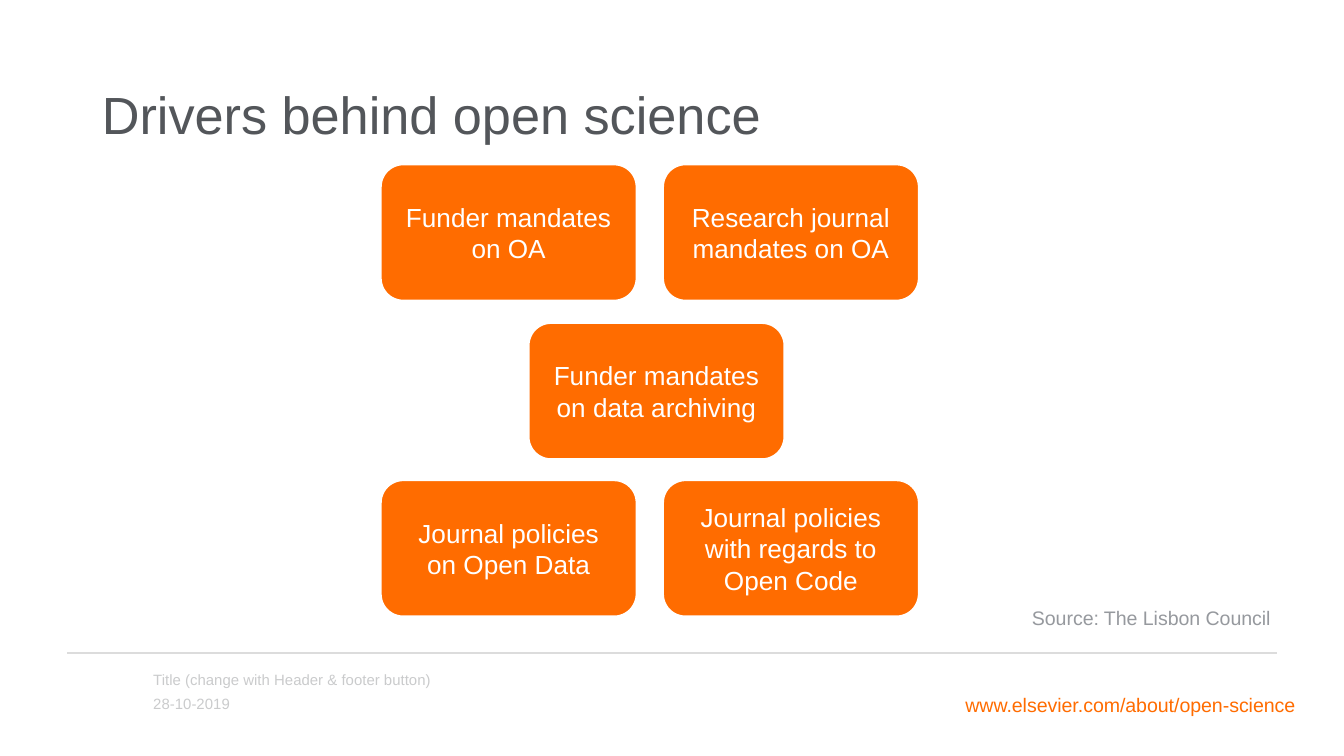
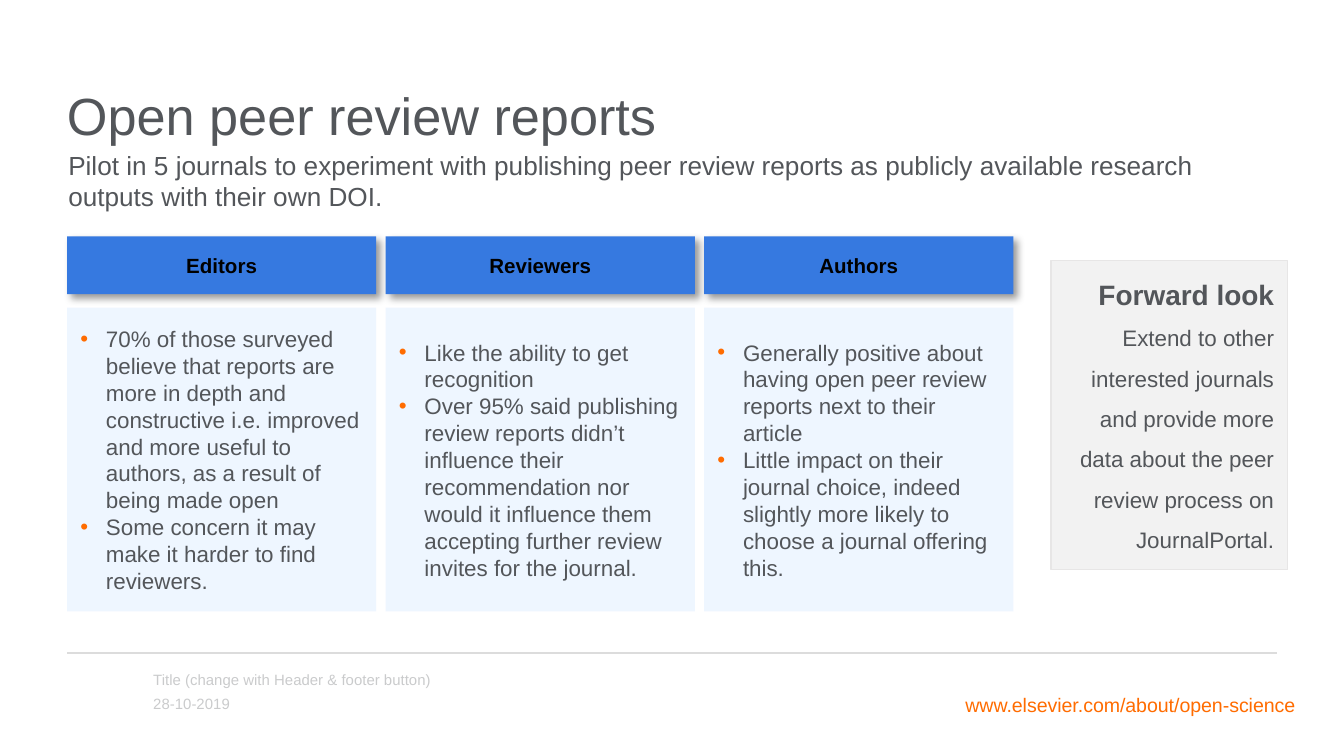
from lxml.etree import SubElement as Sub
from pptx import Presentation
from pptx.dml.color import RGBColor as Rgb
from pptx.enum.shapes import MSO_CONNECTOR as Conn, MSO_SHAPE as Kind
from pptx.enum.text import MSO_ANCHOR as Anchor, MSO_AUTO_SIZE as Auto, PP_ALIGN as Align
from pptx.oxml.ns import qn
from pptx.util import Inches, Pt

HUES = {
    "text": "53565A",
    "orange": "FF6C00",
    "white": "FFFFFF",
    "black": "000000",
    "rule": "DCDCDC",
    "foot": "CACBCC",
    "source": "96999E",
    "blue": "3679E0",
    "pale": "ACD2FF",
    "panel": "F2F2F2",
    "edge": "E7E6E6",
}
FONT = "Arial"
PAD = (0.1, 0.05, 0.1, 0.05)

DRIVERS = [
    (2.83, 1.22, ["Funder mandates on OA"]),
    (4.93, 1.22, ["Research journal", "mandates on OA"]),
    (3.93, 2.4, ["Funder mandates on data archiving"]),
    (2.83, 3.57, ["Journal policies on Open Data"]),
    (4.93, 3.57, ["Journal policies", "with regards to", "Open Code"]),
]
GROUPS = [
    ("Editors", [
        "70% of those surveyed believe that reports are more in depth and "
        "constructive i.e. improved and more useful to authors, as a result "
        "of being made open",
        "Some concern it may make it harder to find reviewers.",
    ]),
    ("Reviewers", [
        "Like the ability to get recognition",
        "Over 95% said publishing review reports didn’t influence their "
        "recommendation nor would it influence them accepting further "
        "review invites for the journal.",
    ]),
    ("Authors", [
        "Generally positive about having open peer review reports next to "
        "their article",
        "Little impact on their journal choice, indeed slightly more likely "
        "to choose a journal offering this.",
    ]),
]


def hue(name):
    return Rgb.from_string(HUES[name])


def style(para, size, color, bold=False, align=Align.LEFT, space=None):
    font = para.font
    font.name, font.size, font.bold = FONT, Pt(size), bold
    font.color.rgb = hue(color)
    para.alignment = align
    if space:
        para.line_spacing = space


def write(shape, lines, size, color, pad=PAD, anchor=Anchor.TOP, wrap=True,
          bullet=False, **look):
    frame = shape.text_frame
    frame.word_wrap = wrap
    frame.vertical_anchor = anchor
    (frame.margin_left, frame.margin_top,
     frame.margin_right, frame.margin_bottom) = map(Inches, pad)
    frame.text = "\n".join(lines)
    for para in frame.paragraphs:
        if bullet:
            add_dot(para)
        style(para, size, color, **look)
    return frame


def add_dot(para):
    props = para._p.get_or_add_pPr()
    props.set("marL", str(Inches(0.19)))
    props.set("indent", str(-Inches(0.19)))
    tint = Sub(props, qn("a:buClr"))
    Sub(tint, qn("a:srgbClr"), val=HUES["orange"])
    Sub(props, qn("a:buFont"), typeface=FONT)
    Sub(props, qn("a:buChar"), char="•")


def add_text(slide, box, lines, size, color, grow=False, **look):
    shape = slide.shapes.add_textbox(*map(Inches, box))
    frame = write(shape, lines, size, color, **look)
    frame.auto_size = Auto.SHAPE_TO_FIT_TEXT if grow else Auto.NONE


def add_box(slide, kind, box, fill, edge=None, width=1):
    shape = slide.shapes.add_shape(kind, *map(Inches, box))
    shape.shadow.inherit = False
    shape.fill.solid()
    shape.fill.fore_color.rgb = hue(fill)
    if edge:
        shape.line.color.rgb = hue(edge)
        shape.line.width = Pt(width)
    else:
        shape.line.fill.background()
    return shape


def fade(shape, share):
    tint = shape._element.spPr.find(qn("a:solidFill"))[0]
    Sub(tint, qn("a:alpha"), val=str(share * 1000))


def add_shade(shape):
    effects = shape._element.spPr.find(qn("a:effectLst"))
    shade = Sub(effects, qn("a:outerShdw"), blurRad=str(Pt(4)),
                dist=str(Pt(3)), dir=str(45 * 60000), algn="tl",
                rotWithShape="0")
    tint = Sub(shade, qn("a:srgbClr"), val=HUES["black"])
    Sub(tint, qn("a:alpha"), val="40000")


def add_rule(slide):
    ends = map(Inches, (0.5, 4.86, 9.5, 4.86))
    rule = slide.shapes.add_connector(Conn.STRAIGHT, *ends)
    rule.line.color.rgb = hue("rule")
    rule.line.width = Pt(1)
    Sub(rule._element.spPr, qn("a:effectLst"))


def add_slide(deck, title, box):
    slide = deck.slides.add_slide(deck.slide_layouts[6])
    add_rule(slide)
    add_text(slide, (7.02, 5.11, 2.72, 0.28),
             ["www.elsevier.com/about/open-science"], 10.5, "orange",
             grow=True, wrap=False, align=Align.RIGHT)
    add_text(slide, box, [title], 28, "text", pad=(0.1, 0, 0.1, 0),
             space=Pt(48))
    for top, width, line in [
        (5.16, 3.38, "28-10-2019"),
        (4.98, 4.92, "Title (change with Header & footer button)"),
    ]:
        add_text(slide, (1.14, top, width, 0.15), [line], 8, "foot",
                 pad=(0, 0.05, 0.1, 0.05), anchor=Anchor.MIDDLE)
    return slide


def add_driver(slide, left, top, lines):
    card = add_box(slide, Kind.ROUNDED_RECTANGLE, (left, top, 1.91, 1.02),
                   "orange", "white", 1.5)
    write(card, lines, 14, "white", anchor=Anchor.MIDDLE, align=Align.CENTER)


def add_group(slide, left, name, points):
    body = add_box(slide, Kind.RECTANGLE, (left, 2.29, 2.3, 2.26), "pale")
    fade(body, 20)
    write(body, points, 12, "text", anchor=Anchor.MIDDLE, bullet=True)
    head = add_box(slide, Kind.RECTANGLE, (left, 1.76, 2.3, 0.43), "blue")
    add_shade(head)
    write(head, [name], 11, "black", anchor=Anchor.MIDDLE, bold=True,
          align=Align.CENTER)


def add_panel(slide, head, text):
    panel = add_box(slide, Kind.RECTANGLE, (7.82, 1.94, 1.76, 2.3), "panel",
                    "edge", 0.75)
    frame = write(panel, [head, text], 12, "text", pad=(0.1, 0, 0.1, 0.05),
                  align=Align.RIGHT, space=1.5)
    style(frame.paragraphs[0], 15, "text", True, Align.RIGHT, 1.5)


def main():
    deck = Presentation()
    deck.slide_width = Inches(10)
    deck.slide_height = Inches(10) * 9 // 16

    slide = add_slide(deck, "Drivers behind open science",
                      (0.66, 0.41, 8.67, 0.51))
    for left, top, lines in DRIVERS:
        add_driver(slide, left, top, lines)
    add_text(slide, (7.58, 4.46, 2.02, 0.28), ["Source: The Lisbon Council"],
             10.5, "source", grow=True, wrap=False)

    slide = add_slide(deck, "Open peer review reports",
                      (0.4, 0.42, 7.51, 0.51))
    add_panel(slide, "Forward look",
              "Extend to other interested journals and provide more data "
              "about the peer review process on JournalPortal.")
    add_text(slide, (0.41, 1.06, 9.17, 0.57),
             ["Pilot in 5 journals to experiment with publishing peer review "
              "reports as publicly available research outputs with their own "
              "DOI."], 14, "text", grow=True)
    for col, (name, points) in enumerate(GROUPS):
        add_group(slide, 0.5 + col * 2.37, name, points)

    deck.save("out.pptx")


if __name__ == "__main__":
    main()
